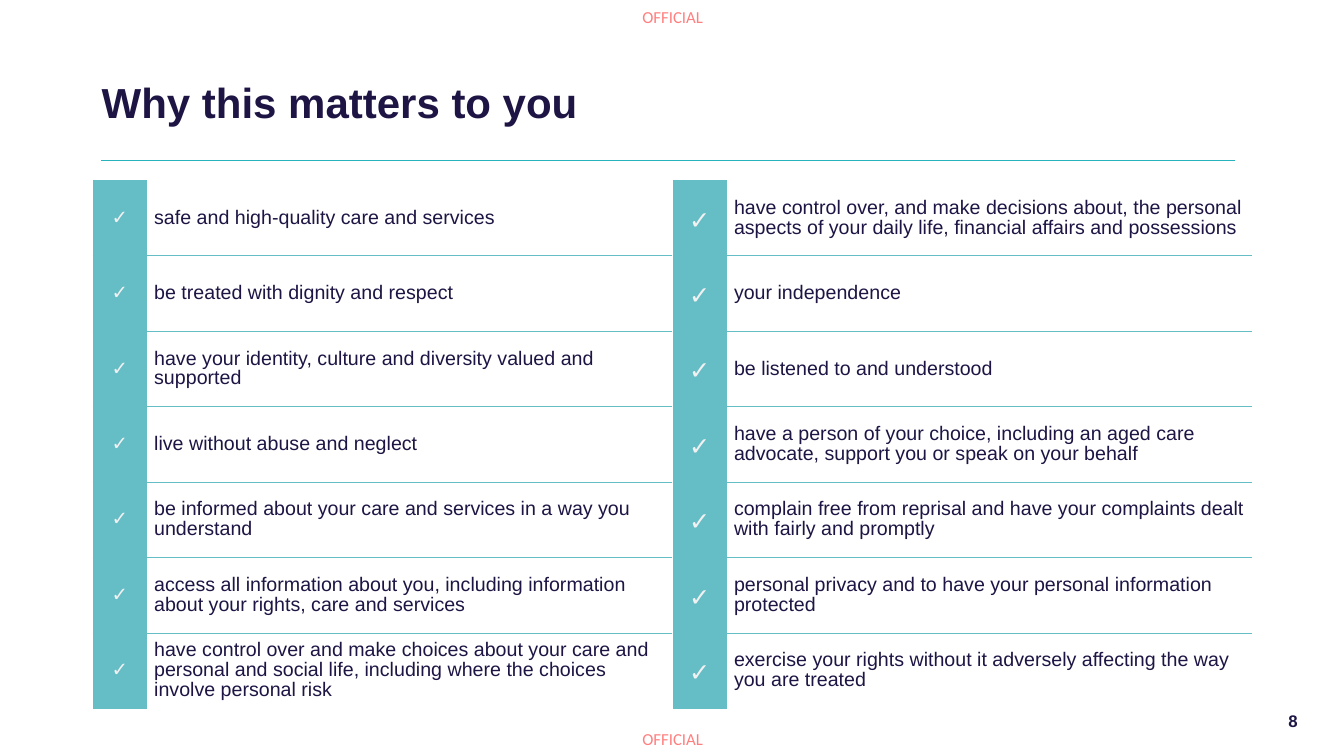
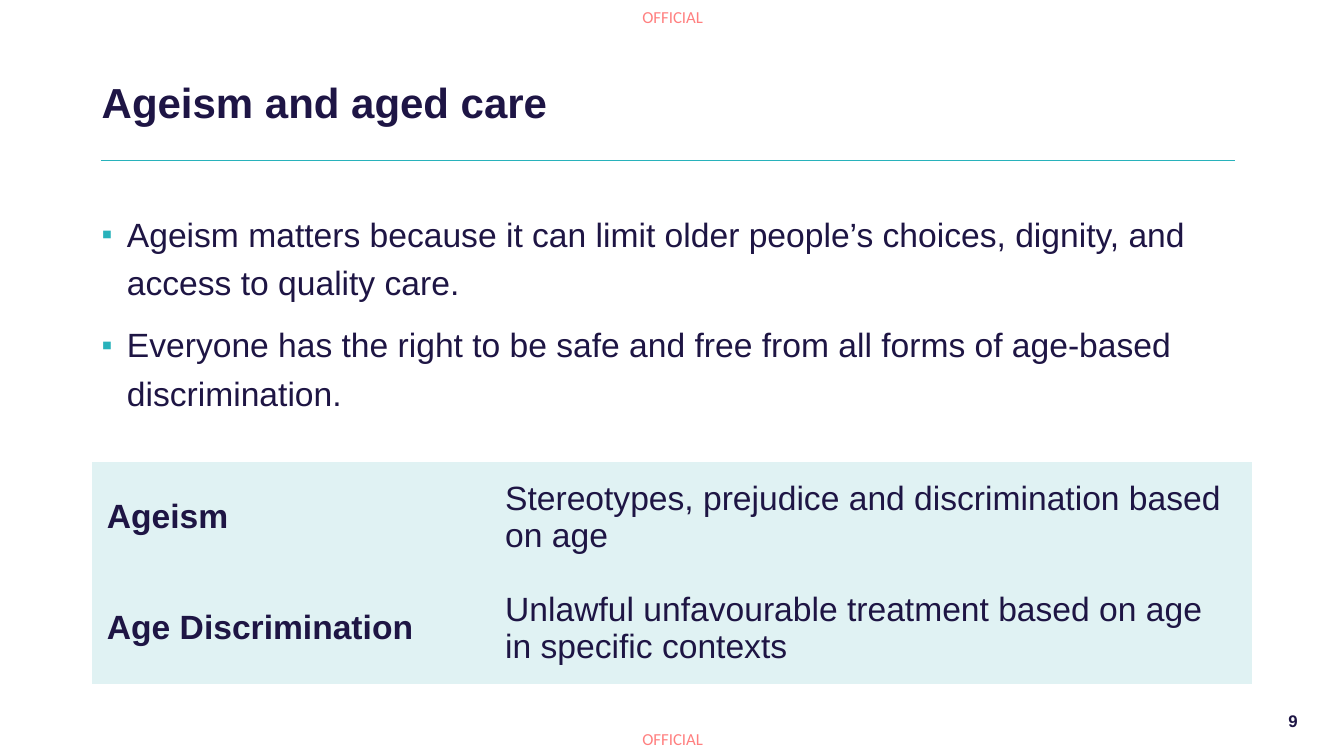
from dataclasses import dataclass
from typing import Optional

from lxml.etree import SubElement
from pptx import Presentation
from pptx.dml.color import RGBColor
from pptx.enum.shapes import MSO_CONNECTOR as Connector
from pptx.enum.text import MSO_ANCHOR as Anchor, PP_ALIGN as Align
from pptx.oxml.ns import qn
from pptx.slide import Slide
from pptx.table import Table
from pptx.text.text import TextFrame
from pptx.util import Emu, Inches, Pt

COLOURS = {
    "title": "1E1545",
    "body": "1E1544",
    "rule": "28B2BB",
    "band": "65BDC5",
    "panel": "E0F2F3",
    "tick": "F2F1F2",
    "marking": "FF0000",
}
SLIDE_WIDTH = Inches(13.33)
SLIDE_HEIGHT = Inches(7.5)
NO_GRID_STYLE = "{2D5ABB26-0587-4C30-8999-92F81FD0307C}"


def across(percent: float) -> Emu:
    return Emu(round(SLIDE_WIDTH * percent / 100))


def down(percent: float) -> Emu:
    return Emu(round(SLIDE_HEIGHT * percent / 100))


@dataclass(frozen=True)
class Area:
    """Position and size as percentages of the slide."""

    left: float
    top: float
    width: float
    height: float

    def lengths(self) -> tuple[Emu, Emu, Emu, Emu]:
        return across(self.left), down(self.top), across(self.width), down(self.height)


@dataclass(frozen=True)
class TextStyle:
    size: float
    colour: str = "body"
    bold: bool = False
    font: str = "Arial"
    align: Align = Align.LEFT
    line_spacing: Optional[float] = None
    before: float = 0
    after: float = 0


@dataclass(frozen=True)
class CellStyle:
    text: TextStyle
    fill: Optional[str] = None
    margin_x: float = 0.07
    margin_y: float = 0


@dataclass(frozen=True)
class Grid:
    area: Area
    column_weights: tuple[int, ...]
    column_styles: tuple[CellStyle, ...]
    rows: list[tuple[str, ...]]
    row_rule: Optional[str] = None


TITLE = TextStyle(30, "title", True, line_spacing=0.9)
NUMBER = TextStyle(12, "title", True, align=Align.RIGHT)
MARKING = TextStyle(12, "marking", font="Calibri")
BULLET = TextStyle(24, line_spacing=1.2, before=10)
RIGHT_TEXT = CellStyle(TextStyle(14, line_spacing=0.9, before=6, after=6))
TERM = CellStyle(TextStyle(24, bold=True), "panel", 0.15, 0.15)
MEANING = CellStyle(TextStyle(24), "panel", 0.15, 0.15)

TITLE_AREA = Area(6.83, 9.87, 61.05, 8)
NUMBER_AREA = Area(93.92, 92.67, 3.38, 5.33)
MARKING_AREAS = [Area(47.79, top, 4.8, 2.67) for top in (0.93, 96.4)]
BULLET_AREA = Area(6.83, 26.53, 86.35, 32.27)
DEFINITION_AREA = Area(6.83, 61.07, 86.35, 29.07)
RIGHTS_LEFT, RIGHTS_WIDTH = 6.9, 43.14

RIGHTS = [
    [
        "safe and high-quality care and services",
        "be treated with dignity and respect",
        "have your identity, culture and diversity valued and supported",
        "live without abuse and neglect",
        "be informed about your care and services in a way you understand",
        "access all information about you, including information about your rights, "
        "care and services",
        "have control over and make choices about your care and personal and social life, "
        "including where the choices involve personal risk",
    ],
    [
        "have control over, and make decisions about, the personal aspects of your daily life, "
        "financial affairs and possessions",
        "your independence",
        "be listened to and understood",
        "have a person of your choice, including an aged care advocate, "
        "support you or speak on your behalf",
        "complain free from reprisal and have your complaints dealt with fairly and promptly",
        "personal privacy and to have your personal information protected",
        "exercise your rights without it adversely affecting the way you are treated",
    ],
]
TICK_SIZES = [(14, 0.9), (18, 1.15)]
AGEISM_POINTS = [
    "Ageism matters because it can limit older people’s choices, dignity, "
    "and access to quality care.",
    "Everyone has the right to be safe and free from all forms of age-based discrimination.",
]
DEFINITIONS = [
    ("Ageism", "Stereotypes, prejudice and discrimination based on age"),
    ("Age Discrimination", "Unlawful unfavourable treatment based on age in specific contexts"),
]


def rgb(name: str) -> RGBColor:
    return RGBColor.from_string(COLOURS[name])


def write(text_frame: TextFrame, text: str, style: TextStyle) -> None:
    text_frame.text = text
    for paragraph in text_frame.paragraphs:
        paragraph.alignment = style.align
        paragraph.space_before = Pt(style.before)
        paragraph.space_after = Pt(style.after)
        if style.line_spacing:
            paragraph.line_spacing = style.line_spacing
        for run in paragraph.runs:
            run.font.name = style.font
            run.font.size = Pt(style.size)
            run.font.bold = style.bold
            run.font.color.rgb = rgb(style.colour)


def add_text(slide: Slide, area: Area, text: str, style: TextStyle,
             anchor: Anchor = Anchor.MIDDLE) -> TextFrame:
    text_frame = slide.shapes.add_textbox(*area.lengths()).text_frame
    text_frame.word_wrap = True
    text_frame.vertical_anchor = anchor
    write(text_frame, text, style)
    return text_frame


def add_marking(slide: Slide, area: Area) -> None:
    text_frame = add_text(slide, area, "OFFICIAL", MARKING, Anchor.TOP)
    text_frame.word_wrap = False
    text_frame.margin_left = text_frame.margin_right = 0
    text_frame.margin_top = text_frame.margin_bottom = 0
    run = text_frame.paragraphs[0].runs[0]
    colour = run.font.fill._xPr.find(f".//{qn('a:srgbClr')}")
    SubElement(colour, qn("a:alpha"), val="50000")


def add_rule(slide: Slide) -> None:
    rule = slide.shapes.add_connector(
        Connector.STRAIGHT, across(7.5), down(21.2), across(91.9), down(21.2))
    rule.line.color.rgb = rgb("rule")
    rule.line.width = Pt(1)
    SubElement(rule.element.spPr, qn("a:effectLst"))


def add_bullets(slide: Slide, points: list[str]) -> None:
    text_frame = add_text(slide, BULLET_AREA, "\n".join(points), BULLET, Anchor.TOP)
    indent = Inches(0.25)
    for paragraph in text_frame.paragraphs:
        properties = paragraph._p.get_or_add_pPr()
        properties.set("marL", str(indent))
        properties.set("indent", str(-indent))
        colour = SubElement(properties, qn("a:buClr"))
        SubElement(colour, qn("a:srgbClr"), val=COLOURS["rule"])
        SubElement(properties, qn("a:buSzPct"), val="91000")
        SubElement(properties, qn("a:buFont"), typeface="Arial")
        SubElement(properties, qn("a:buChar"), char="▪")


def rule_rows(table: Table, colour: str) -> None:
    last_row = len(table.rows) - 1
    for row_index, row in enumerate(table.rows):
        sides = [("a:lnT", row_index > 0), ("a:lnB", row_index < last_row)]
        shown = [tag for tag, visible in sides if visible]
        for cell in row.cells:
            properties = cell._tc.get_or_add_tcPr()
            for position, tag in enumerate(shown):
                border = SubElement(properties, qn(tag), w=str(Pt(1)))
                fill = SubElement(border, qn("a:solidFill"))
                SubElement(fill, qn("a:srgbClr"), val=COLOURS[colour])
                properties.insert(position, border)


def add_grid(slide: Slide, grid: Grid) -> None:
    frame = slide.shapes.add_table(
        len(grid.rows), len(grid.column_weights), *grid.area.lengths())
    frame.element.find(f".//{qn('a:tableStyleId')}").text = NO_GRID_STYLE
    table = frame.table
    table.first_row = table.horz_banding = False
    total = sum(grid.column_weights)
    for column, weight in zip(table.columns, grid.column_weights):
        column.width = across(grid.area.width * weight / total)
    for row, texts in zip(table.rows, grid.rows):
        row.height = down(grid.area.height / len(grid.rows))
        for cell, text, style in zip(row.cells, texts, grid.column_styles):
            cell.vertical_anchor = Anchor.MIDDLE
            cell.margin_left = cell.margin_right = Inches(style.margin_x)
            cell.margin_top = cell.margin_bottom = Inches(style.margin_y)
            write(cell.text_frame, text, style.text)
            if style.fill:
                cell.fill.solid()
                cell.fill.fore_color.rgb = rgb(style.fill)
            else:
                cell.fill.background()
    if grid.row_rule:
        rule_rows(table, grid.row_rule)


def add_base_slide(presentation: Presentation, title: str, number: int) -> Slide:
    slide = presentation.slides.add_slide(presentation.slide_layouts[6])
    for area in MARKING_AREAS:
        add_marking(slide, area)
    add_rule(slide)
    add_text(slide, NUMBER_AREA, str(number), NUMBER)
    add_text(slide, TITLE_AREA, title, TITLE)
    return slide


def build_rights(presentation: Presentation) -> None:
    slide = add_base_slide(presentation, "Why this matters to you", 8)
    for index, (rights, (size, spacing)) in enumerate(zip(RIGHTS, TICK_SIZES)):
        tick = TextStyle(size, "tick", True, align=Align.CENTER,
                         line_spacing=spacing, before=6, after=6)
        area = Area(RIGHTS_LEFT + index * RIGHTS_WIDTH, 23.87, RIGHTS_WIDTH, 69.87)
        rows = [("✓", right) for right in rights]
        add_grid(slide, Grid(area, (54, 521), (CellStyle(tick, "band"), RIGHT_TEXT),
                             rows, "band"))


def build_ageism(presentation: Presentation) -> None:
    slide = add_base_slide(presentation, "Ageism and aged care", 9)
    add_bullets(slide, AGEISM_POINTS)
    add_grid(slide, Grid(DEFINITION_AREA, (395, 756), (TERM, MEANING), DEFINITIONS))


def main() -> None:
    presentation = Presentation()
    presentation.slide_width = SLIDE_WIDTH
    presentation.slide_height = SLIDE_HEIGHT
    build_rights(presentation)
    build_ageism(presentation)
    presentation.save("out.pptx")


if __name__ == "__main__":
    main()
